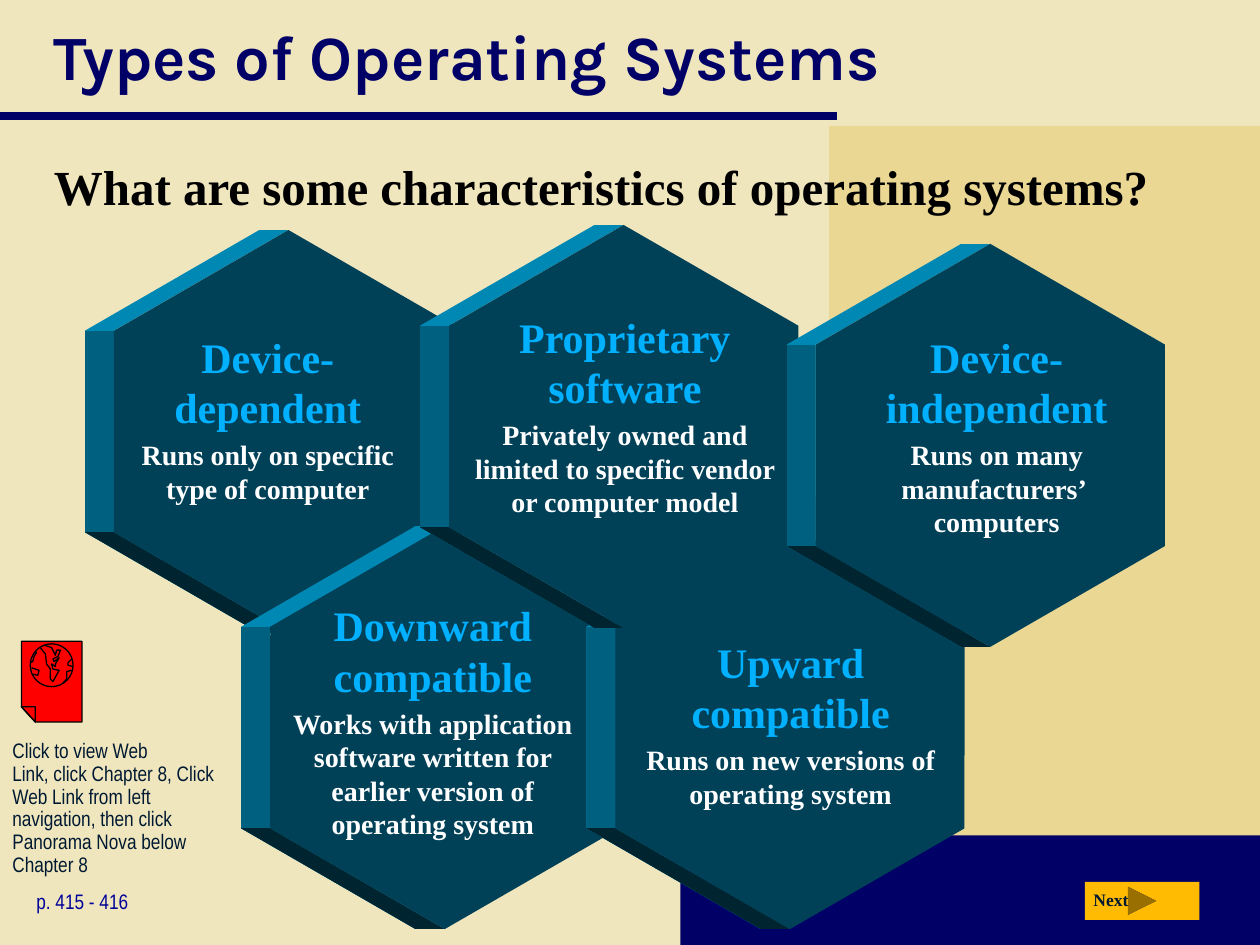
from dataclasses import dataclass
from math import cos, pi, sin, sqrt

from lxml.etree import SubElement
from pptx import Presentation
from pptx.dml.color import RGBColor as RGB
from pptx.enum.shapes import MSO_CONNECTOR as Connector, MSO_SHAPE as Preset
from pptx.enum.text import MSO_ANCHOR as Anchor, PP_ALIGN as Align
from pptx.oxml.ns import qn
from pptx.util import Inches, Pt


@dataclass(frozen=True)
class Theme:
    cream: str = "F0E6BE"
    sand: str = "E9D793"
    navy: str = "000066"
    page_blue: str = "000099"
    face: str = "004158"
    top_side: str = "0088B5"
    left_side: str = "006080"
    bottom_side: str = "002530"
    heading: str = "01B0FF"
    white: str = "FFFFFF"
    black: str = "000000"
    ink: str = "001932"
    button: str = "FFBA02"
    red: str = "FF0000"
    serif: str = "Times New Roman"
    narrow: str = "Arial Narrow"
    display: str = "Karla"
    title_size: int = 36
    question_size: int = 28
    heading_size: int = 24
    detail_size: int = 16
    note_size: int = 12
    button_size: int = 10


class SlideBuilder:
    hex_length = 3.2
    hex_width = 2.77
    depth = 0.23

    def __init__(self, slide, theme):
        self.slide, self.shapes, self.theme = slide, slide.shapes, theme

    def background(self, color):
        fill = self.slide.background.fill
        fill.solid()
        fill.fore_color.rgb = RGB.from_string(color)

    def paint(self, shape, fill=None, line=None, width=0.75):
        shape.shadow.inherit = False
        if fill:
            shape.fill.solid()
            shape.fill.fore_color.rgb = RGB.from_string(fill)
        else:
            shape.fill.background()
        if line:
            shape.line.color.rgb = RGB.from_string(line)
            shape.line.width = Pt(width)
        else:
            shape.line.fill.background()
        return shape

    def block(self, preset, box, fill):
        return self.paint(self.shapes.add_shape(preset, *map(Inches, box)), fill)

    def outline(self, contours, fill=None, line=None):
        builder = None
        for points, closed in contours:
            start, *rest = [(Inches(x), Inches(y)) for x, y in points]
            if builder:
                builder.move_to(*start)
            else:
                builder = self.shapes.build_freeform(*start)
            builder.add_line_segments(rest, close=closed)
        return self.paint(builder.convert_to_shape(), fill, line)

    def bands(self, shape, stops):
        shape.fill.gradient()
        shape.fill.gradient_angle = 270
        stop_list = shape._element.spPr.find(".//" + qn("a:gsLst"))
        for stop in list(stop_list):
            stop_list.remove(stop)
        for percent, color in stops:
            stop = SubElement(stop_list, qn("a:gs"), pos=str(percent * 1000))
            SubElement(stop, qn("a:srgbClr"), val=color)

    def rule(self, start, end, color, width):
        rule = self.shapes.add_connector(Connector.STRAIGHT, *map(Inches, start + end))
        rule.line.color.rgb = RGB.from_string(color)
        rule.line.width = Pt(width)
        SubElement(rule._element.spPr, qn("a:effectLst"))

    def text(self, box, paragraphs, align=Align.LEFT, anchor=Anchor.TOP,
             before=0.0, spacing=None):
        frame = self.shapes.add_textbox(*map(Inches, box)).text_frame
        frame.word_wrap = True
        frame.vertical_anchor = anchor
        for index, (words, face, size, color, bold) in enumerate(paragraphs):
            paragraph = frame.add_paragraph() if index else frame.paragraphs[0]
            paragraph.text = words
            layout = {"alignment": align, "space_before": Pt(size * before),
                      "line_spacing": spacing}
            for name, value in layout.items():
                setattr(paragraph, name, value)
            font_format = {"name": face, "size": Pt(size), "bold": bold}
            for run in paragraph.runs:
                for name, value in font_format.items():
                    setattr(run.font, name, value)
                run.font.color.rgb = RGB.from_string(color)

    def hexagon(self, left, top, text_box, heading, detail):
        theme = self.theme
        middle_x = left + self.hex_length / 2
        middle_y = top + self.hex_width / 2
        radius = self.hex_length / 2
        west = middle_x - radius * sqrt(3) / 2
        edge = [(middle_x, middle_y - radius), (west, middle_y - radius / 2),
                (west, middle_y + radius / 2), (middle_x, middle_y + radius)]
        far_edge = [(x - self.depth, y) for x, y in reversed(edge)]
        sides = self.outline([(edge + far_edge, True)], theme.left_side)
        self.bands(sides, [(0, theme.top_side), (25, theme.top_side),
                           (25, theme.left_side), (75, theme.left_side),
                           (75, theme.bottom_side), (100, theme.bottom_side)])
        face = self.block(Preset.HEXAGON,
                          (left, top, self.hex_length, self.hex_width), theme.face)
        face.adjustments[0] = 0.289
        face.adjustments[1] = 1.1547
        face.rotation = 330
        self.text(text_box, [
            (heading, theme.serif, theme.heading_size, theme.heading, True),
            (detail, theme.serif, theme.detail_size, theme.white, True),
        ], Align.CENTER, before=0.2)

    def web_icon(self):
        sheet = [(0.17, 5.09), (0.65, 5.09), (0.65, 5.73), (0.28, 5.73), (0.17, 5.61)]
        fold = [(0.17, 5.61), (0.28, 5.61), (0.28, 5.73)]
        globe = [(0.41 + 0.17 * cos(step * pi / 16), 5.28 + 0.17 * sin(step * pi / 16))
                 for step in range(32)]
        coasts = [
            [(0.24, 5.26), (0.26, 5.25), (0.27, 5.21), (0.29, 5.18), (0.28, 5.17)],
            [(0.25, 5.3), (0.28, 5.31), (0.31, 5.32), (0.3, 5.36), (0.26, 5.35)],
            [(0.5, 5.42), (0.53, 5.39), (0.53, 5.33), (0.57, 5.32)],
            [(0.58, 5.29), (0.54, 5.28), (0.54, 5.26), (0.57, 5.23)],
            [(0.35, 5.12), (0.41, 5.14), (0.44, 5.2), (0.45, 5.16), (0.48, 5.16),
             (0.46, 5.21), (0.42, 5.23), (0.43, 5.25), (0.47, 5.22), (0.44, 5.27),
             (0.44, 5.29), (0.41, 5.27), (0.42, 5.31), (0.47, 5.32), (0.42, 5.41),
             (0.4, 5.39), (0.4, 5.31), (0.37, 5.27), (0.36, 5.19), (0.32, 5.14)],
        ]
        self.outline([(sheet, True)], self.theme.red, self.theme.black)
        self.outline([(fold, True), (globe, True)] + [(coast, False) for coast in coasts],
                     line=self.theme.black)


def main():
    deck = Presentation()
    deck.slide_width, deck.slide_height = Inches(10), Inches(7.5)
    theme = Theme()
    page = SlideBuilder(deck.slides.add_slide(deck.slide_layouts[6]), theme)

    page.background(theme.cream)
    page.block(Preset.RECTANGLE, (6.58, 1, 3.42, 6.5), theme.sand)
    page.block(Preset.RECTANGLE, (5.4, 6.63, 4.6, 0.87), theme.navy)
    page.rule((0, 0.92), (6.64, 0.92), theme.navy, 5)

    page.hexagon(0.69, 2.04, (1, 2.58, 2.25, 1.49), "Device-dependent",
                 "Runs only on specific type of computer")
    page.text((0.33, 0, 9.39, 0.88), [("Types of Operating Systems", theme.display,
              theme.title_size, theme.navy, True)], anchor=Anchor.MIDDLE)
    page.text((0.33, 1.19, 9.67, 0.86),
              [("What are some characteristics of operating systems?", theme.serif,
                theme.question_size, theme.black, True)], before=0.2)
    page.block(Preset.ACTION_BUTTON_FORWARD_OR_NEXT, (8.61, 7, 0.91, 0.3), theme.button)
    page.text((8.58, 7.01, 0.51, 0.27),
              [("Next", theme.serif, theme.button_size, theme.ink, True)], before=0.5)
    page.text((0.19, 7, 1.69, 0.3),
              [("p. 415 - 416", theme.narrow, theme.note_size, theme.page_blue, False)],
              before=0.5)

    characteristics = [
        (1.93, 4.39, (2.06, 4.71, 2.75, 2.02), "Downward compatible",
         "Works with application software written for earlier version of operating system"),
        (4.67, 4.39, (4.9, 5, 2.75, 1.49), "Upward compatible",
         "Runs on new versions of operating system"),
        (3.35, 2, (3.61, 2.42, 2.7, 1.76), "Proprietary software",
         "Privately owned and limited to specific vendor or computer model"),
        (6.26, 2.15, (6.5, 2.58, 2.82, 1.76), "Device-independent",
         "Runs on many manufacturers’ \vcomputers"),
    ]
    for characteristic in characteristics:
        page.hexagon(*characteristic)

    web_note = ("Click to view Web \vLink, click Chapter 8, Click \vWeb Link from left \v"
                "navigation, then click \vPanorama Nova below \vChapter 8")
    page.text((0, 5.83, 2.17, 0.67),
              [(web_note, theme.narrow, theme.note_size, theme.ink, False)], spacing=0.9)
    page.web_icon()
    deck.save("out.pptx")


if __name__ == "__main__":
    main()
